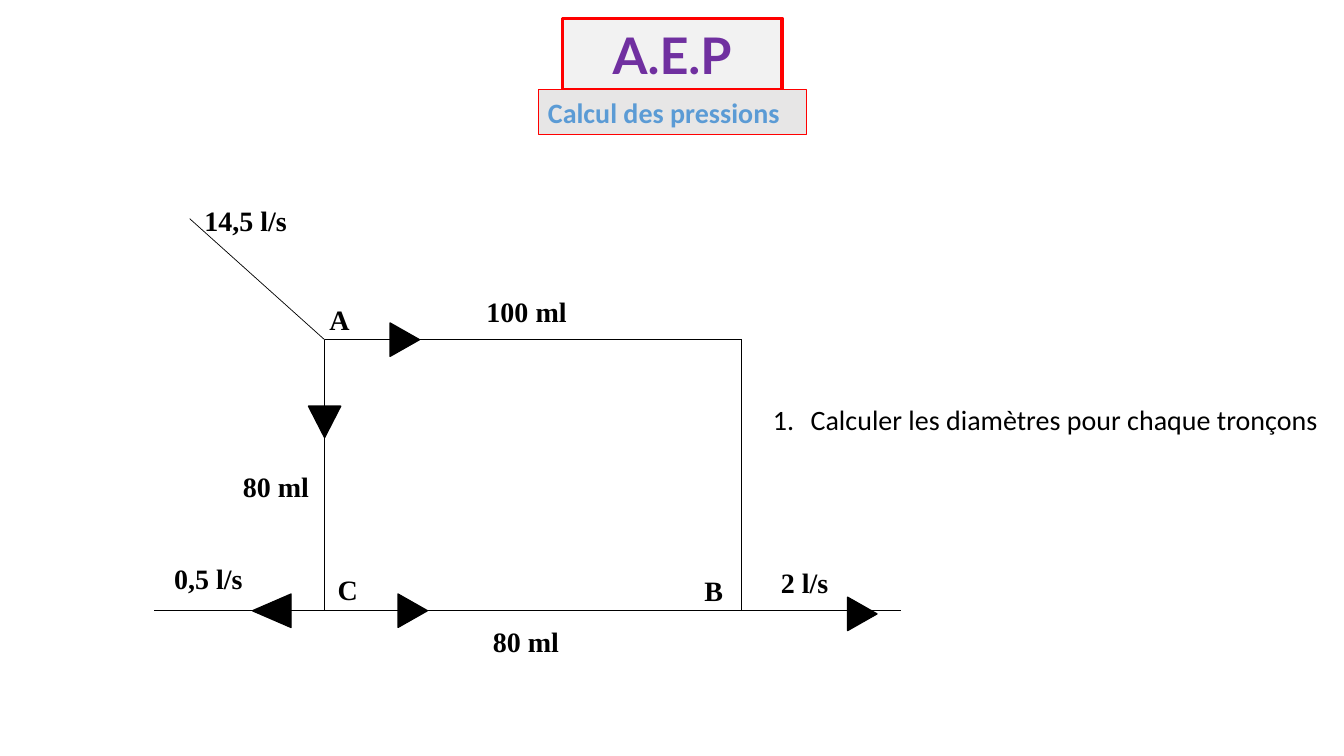
from lxml import etree
from pptx import Presentation
from pptx.dml.color import RGBColor
from pptx.enum.shapes import MSO_CONNECTOR, MSO_SHAPE
from pptx.enum.text import PP_ALIGN
from pptx.oxml.ns import qn
from pptx.util import Cm, Pt

STRAIGHT = MSO_CONNECTOR.STRAIGHT
RECTANGLE, TRIANGLE = MSO_SHAPE.RECTANGLE, MSO_SHAPE.ISOSCELES_TRIANGLE
LEFT, CENTER = PP_ALIGN.LEFT, PP_ALIGN.CENTER
BLACK = "000000"
TITLE_FONT, BODY_FONT, LABEL_FONT = "Lato", "Calibri", "Times New Roman"
RIGHTWARD, DOWNWARD, LEFTWARD = 90, 180, 270
LINE_HEIGHT = 1.12


def color(hex_string):
    return RGBColor.from_string(hex_string)


def write(frame, text, font, size=20, ink=BLACK, bold=True, align=LEFT):
    frame.word_wrap = True
    paragraph = frame.paragraphs[0]
    paragraph.alignment = align
    run = paragraph.add_run()
    run.text = text
    run.font.name, run.font.size, run.font.bold = font, Pt(size), bold
    run.font.color.rgb = color(ink)
    return paragraph


def add_text(slide, left, top, width, text, font, **style):
    label = slide.shapes.add_textbox(Cm(left), Cm(top), Cm(width), Cm(LINE_HEIGHT))
    return write(label.text_frame, text, font, **style)


def add_filled(slide, preset, box, fill, outline, weight):
    shape = slide.shapes.add_shape(preset, *map(Cm, box))
    shape.shadow.inherit = False
    shape.fill.solid()
    shape.fill.fore_color.rgb = color(fill)
    shape.line.color.rgb = color(outline)
    shape.line.width = Pt(weight)
    return shape


def add_pipe(slide, start, end):
    pipe = slide.shapes.add_connector(STRAIGHT, *map(Cm, start + end))
    pipe.line.color.rgb = color(BLACK)
    pipe.line.width = Pt(0.5)
    etree.SubElement(pipe._element.spPr, qn("a:effectLst"))


def add_flow(slide, x, y, direction, base=0.84, length=0.74):
    box = (x - base / 2, y - length / 2, base, length)
    arrow = add_filled(slide, TRIANGLE, box, BLACK, BLACK, 1)
    arrow.rotation = direction


def build_heading(slide, left, top, width):
    # Title centred over the wider subtitle
    title_width, title_height = 5.54, 1.8
    title_box = (left + (width - title_width) / 2, top, title_width, title_height)
    title = add_filled(slide, RECTANGLE, title_box, "F2F2F2", "FF0000", 2.25)
    write(title.text_frame, "A.E.P", TITLE_FONT, size=36, ink="7030A0", align=CENTER)
    subtitle_box = (left, top + title_height, width, LINE_HEIGHT)
    subtitle = add_filled(slide, RECTANGLE, subtitle_box, "E7E6E6", "FF0000", 0.75)
    write(subtitle.text_frame, "Calcul des pressions", BODY_FONT, ink="5B9BD5")


def build_network(slide, left, top, width, height):
    # Nodes of the loop
    x_a, x_b = left + 4.29, left + 14.8
    y_a, y_c = top + 3.56, top + height
    inlet = (left + 0.89, top + 0.51)
    node_a, corner = (x_a, y_a), (x_b, y_a)
    node_c, node_b = (x_a, y_c), (x_b, y_c)
    outlet_b, outlet_c = (left + width, y_c), (left, y_c)
    for start, end in [(inlet, node_a), (node_a, corner), (node_c, node_b),
                       (node_a, node_c), (corner, node_b),
                       (node_b, outlet_b), (node_c, outlet_c)]:
        add_pipe(slide, start, end)

    # Flows, lengths and node names
    for text, x, y in [("14,5 l/s", 1.01, 0), ("100 ml", 8.12, 2.29),
                       ("80 ml", 8.28, 10.6), ("2 l/s", 15.54, 9.12),
                       ("0,5 l/s", 0.25, 9.02), ("80 ml", 1.98, 6.71),
                       ("A", 4.16, 2.49), ("B", 13.61, 9.33), ("C", 4.37, 9.3)]:
        add_text(slide, left + x, top + y, 3.18, text, LABEL_FONT)

    # Flow directions
    add_flow(slide, x_a + 2.02, y_a, RIGHTWARD)
    add_flow(slide, x_a, y_a + 2.07, DOWNWARD, base=0.81, length=0.79)
    add_flow(slide, x_a + 2.22, y_c, RIGHTWARD)
    add_flow(slide, x_b + 3.04, y_c + 0.08, RIGHTWARD)
    add_flow(slide, x_a - 1.33, y_c, LEFTWARD, length=0.97)


def build_question(slide, left, top, width):
    question = add_text(slide, left, top, width,
                        "Calculer les diamètres pour chaque tronçons",
                        BODY_FONT, bold=False)
    properties = question._p.get_or_add_pPr()
    indent = Cm(0.95)
    properties.set("marL", str(indent))
    properties.set("indent", str(-indent))
    etree.SubElement(properties, qn("a:buFont"), typeface="+mj-lt")
    etree.SubElement(properties, qn("a:buAutoNum"), type="arabicPeriod")


def main():
    deck = Presentation()
    deck.slide_width, deck.slide_height = Cm(33.87), Cm(19.05)
    slide = deck.slides.add_slide(deck.slide_layouts[6])
    build_network(slide, 3.89, 5, 18.82, 10.39)
    build_question(slide, 19.23, 10.01, 14.6)
    build_heading(slide, 13.56, 0.46, 6.76)
    deck.save("out.pptx")


if __name__ == "__main__":
    main()
